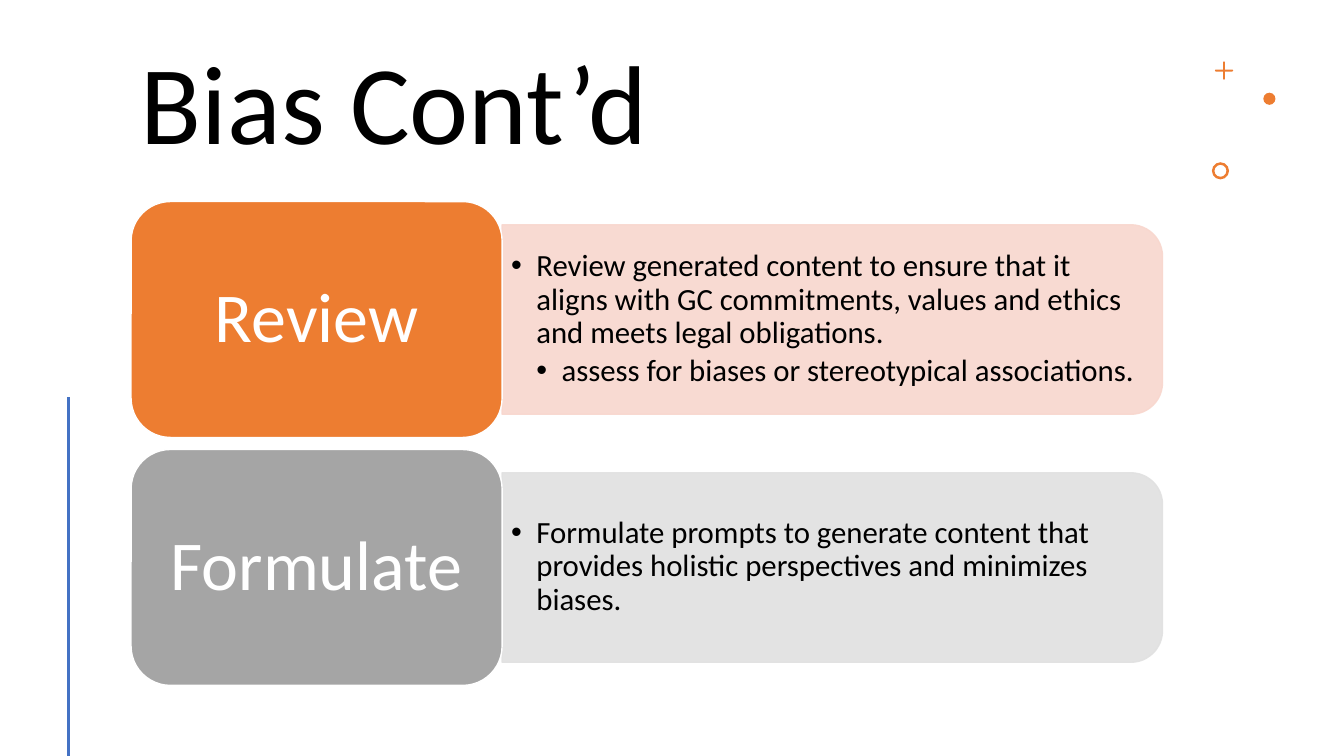
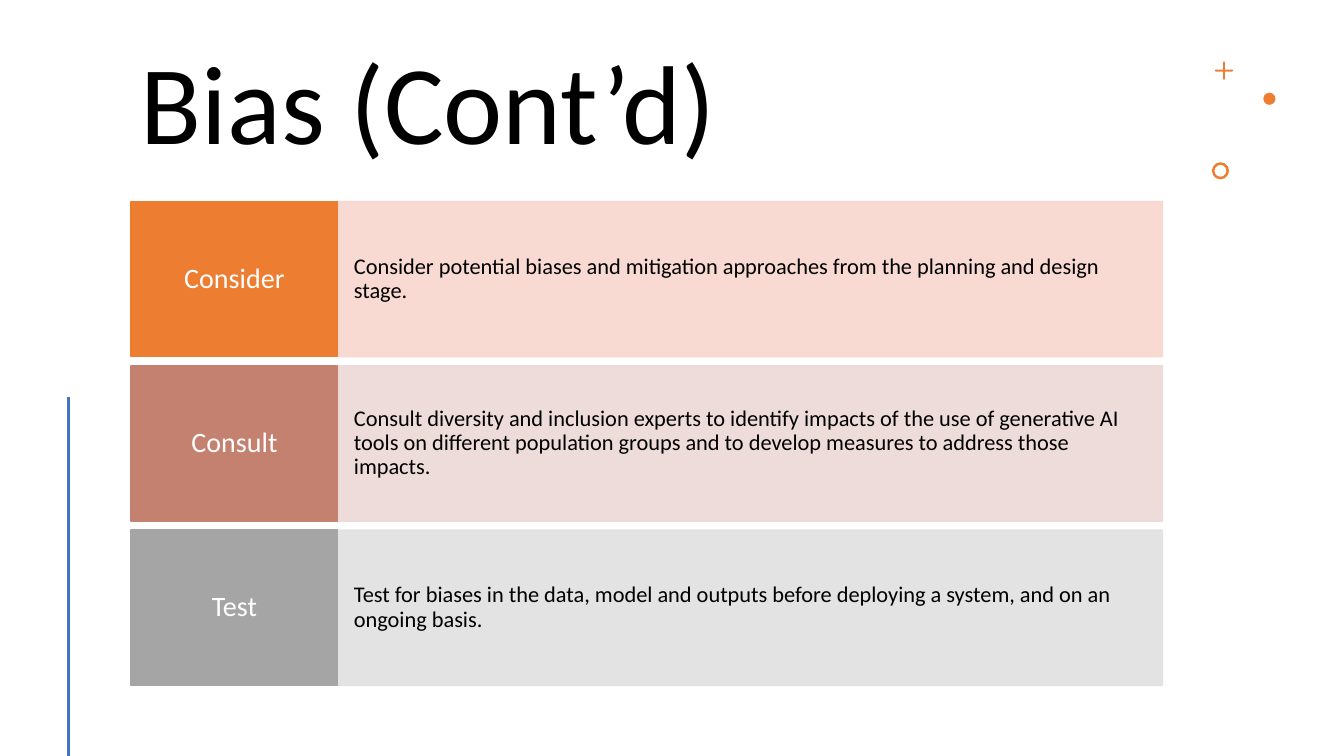
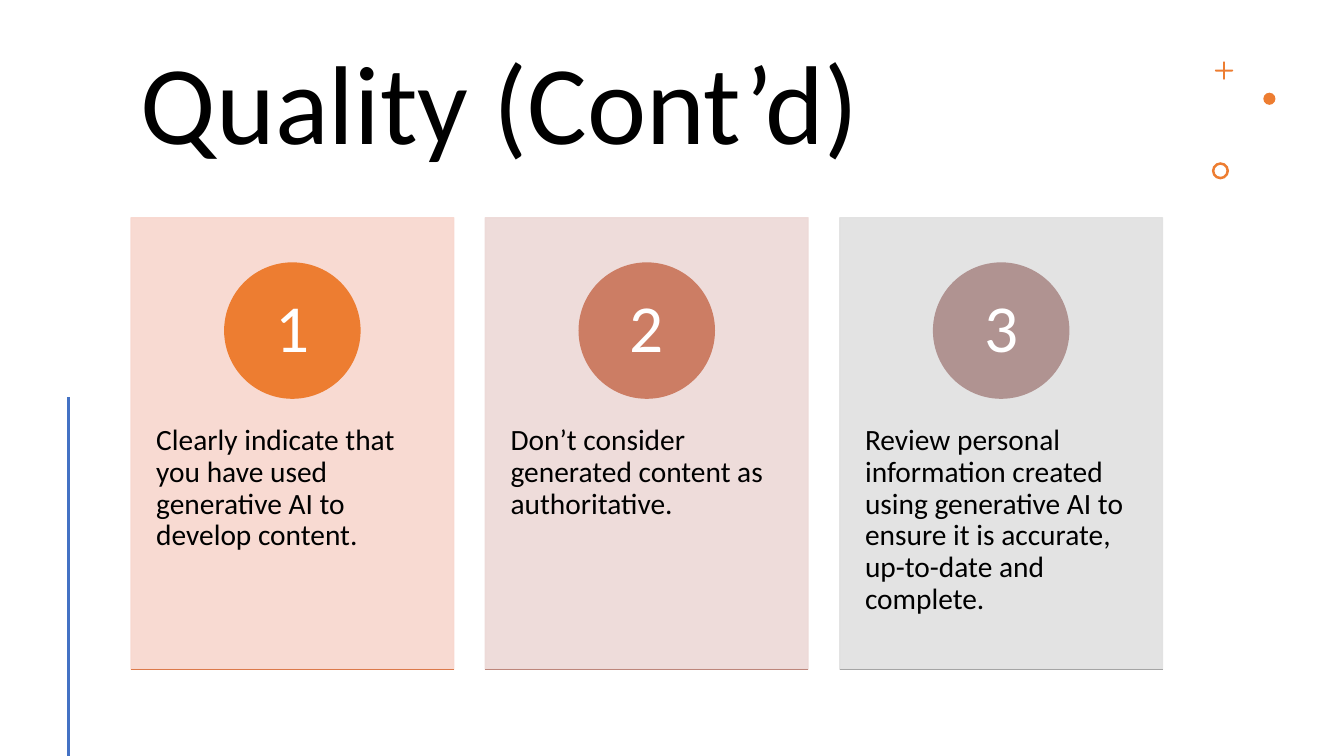
"""Build three slides on bias and quality when using generative AI."""
from math import cos, pi, radians, sin

from pptx import Presentation
from pptx.dml.color import RGBColor
from pptx.enum.shapes import MSO_CONNECTOR, MSO_SHAPE
from pptx.enum.text import MSO_ANCHOR, PP_ALIGN
from pptx.oxml.ns import qn
from pptx.util import Inches, Pt
from lxml.etree import SubElement

FONT = "Calibri"
BLACK = RGBColor(0x00, 0x00, 0x00)
WHITE = RGBColor(0xFF, 0xFF, 0xFF)
BLUE = RGBColor(0x44, 0x72, 0xC4)
ORANGE = RGBColor(0xED, 0x7D, 0x31)
ROSE = RGBColor(0xC4, 0x81, 0x70)
GRAY = RGBColor(0xA5, 0xA5, 0xA5)
TERRACOTTA = RGBColor(0xCC, 0x7D, 0x64)
MAUVE = RGBColor(0xB0, 0x93, 0x91)
RUST = RGBColor(0xDC, 0x7A, 0x4B)
DUSTY_ROSE = RGBColor(0xBD, 0x86, 0x7B)
PALE_ORANGE = RGBColor(0xF8, 0xD7, 0xCE)
PALE_ROSE = RGBColor(0xED, 0xD9, 0xD7)
PALE_GRAY = RGBColor(0xE1, 0xE1, 0xE1)

LEFT, TOP, WIDTH = 1.3, 2, 10.23

ACTIONS = [
    ("Review", ORANGE, PALE_ORANGE, [
        (1, "Review generated content to ensure that it aligns with GC commitments, "
            "values and ethics and meets legal obligations."),
        (2, "assess for biases or stereotypical associations."),
    ]),
    ("Formulate", GRAY, PALE_GRAY, [
        (1, "Formulate prompts to generate content that provides holistic "
            "perspectives and minimizes biases."),
    ]),
]
STEPS = [
    ("Consider", ORANGE, PALE_ORANGE,
     "Consider potential biases and mitigation approaches from the planning and design stage."),
    ("Consult", ROSE, PALE_ROSE,
     "Consult diversity and inclusion experts to identify impacts of the use of generative AI "
     "tools on different population groups and to develop measures to address those impacts."),
    ("Test", GRAY, PALE_GRAY,
     "Test for biases in the data, model and outputs before deploying a system, "
     "and on an ongoing basis."),
]
CARDS = [
    (ORANGE, PALE_ORANGE, RUST,
     "Clearly indicate that you have used generative AI to develop content."),
    (TERRACOTTA, PALE_ROSE, DUSTY_ROSE,
     "Don’t consider generated content as authoritative."),
    (MAUVE, PALE_GRAY, GRAY,
     "Review personal information created using generative AI to ensure it is accurate, "
     "up-to-date and complete."),
]


def style_shape(shape, fill, line=None, alpha=None):
    shape.shadow.inherit = False
    shape.fill.solid()
    shape.fill.fore_color.rgb = fill
    shape.line.color.rgb = line or fill
    shape.line.width = Pt(1)
    if alpha:
        for color in list(shape.element.spPr.iter(qn("a:srgbClr"))):
            SubElement(color, qn("a:alpha")).set("val", str(alpha * 1000))


def add_box(slide, kind, left, top, width, height, fill, line=None, alpha=None):
    shape = slide.shapes.add_shape(
        kind, Inches(left), Inches(top), Inches(width), Inches(height))
    style_shape(shape, fill, line, alpha)
    return shape


def write(shape, lines, size, color=BLACK, align=PP_ALIGN.LEFT,
          anchor=MSO_ANCHOR.MIDDLE, inset=(0.1, 0.05)):
    frame = shape.text_frame
    frame.word_wrap = True
    frame.vertical_anchor = anchor
    frame.margin_left = frame.margin_right = Inches(inset[0])
    frame.margin_top = frame.margin_bottom = Inches(inset[1])
    frame.text = "\n".join(lines)
    for paragraph in frame.paragraphs:
        paragraph.alignment = align
        paragraph.line_spacing = 0.9
        for run in paragraph.runs:
            run.font.name = FONT
            run.font.size = Pt(size)
            run.font.color.rgb = color
    return frame


def add_text_box(slide, left, top, width, height):
    return slide.shapes.add_textbox(
        Inches(left), Inches(top), Inches(width), Inches(height))


def add_bullet(paragraph, level):
    paragraph.space_after = Pt(3.3)
    properties = paragraph._p.get_or_add_pPr()
    properties.set("marL", str(Inches(0.25 * level)))
    properties.set("indent", str(Inches(-0.25)))
    SubElement(properties, qn("a:buFont")).set("typeface", "Arial")
    SubElement(properties, qn("a:buChar")).set("char", "•")


def add_line(slide, start, end, color, width):
    line = slide.shapes.add_connector(
        MSO_CONNECTOR.STRAIGHT, *[Inches(value) for value in start + end])
    line.line.color.rgb = color
    line.line.width = Pt(width)
    SubElement(line.element.spPr, qn("a:effectLst"))


def add_plus(slide, center_x, center_y, reach=0.09, half=0.01):
    points = []
    for turn in range(4):
        angle = turn * pi / 2
        tip = [(reach - half + half * cos(radians(step)), half * sin(radians(step)))
               for step in range(-90, 91, 30)]
        for along, across in [(half, -half)] + tip:
            points.append((
                Inches(center_x + along * cos(angle) - across * sin(angle)),
                Inches(center_y + along * sin(angle) + across * cos(angle))))
    builder = slide.shapes.build_freeform(*points[0], scale=1.0)
    builder.add_line_segments(points[1:], close=True)
    plus = builder.convert_to_shape()
    style_shape(plus, ORANGE)
    plus.line.fill.background()


def add_slide(presentation, title):
    slide = presentation.slides.add_slide(presentation.slide_layouts[6])
    write(add_text_box(slide, LEFT, 0.42, WIDTH, 1.31), [title], 80)
    add_plus(slide, 12.14, 0.7)
    dot = add_box(slide, MSO_SHAPE.OVAL, 12.53, 0.92, 0.12, 0.12, ORANGE)
    ring = add_box(slide, MSO_SHAPE.DONUT, 12.02, 1.61, 0.17, 0.17, ORANGE)
    ring.adjustments[0] = 0.15
    for mark in (dot, ring):
        mark.line.fill.background()
    add_line(slide, (0.68, 3.94), (0.68, 7.5), BLUE, 2)
    return slide


def add_actions(slide):
    label_width, label_height, pitch, panel_height = 3.68, 2.34, 2.46, 1.88
    panel_left, panel_width = LEFT + label_width, WIDTH - label_width
    for index, (label, color, pale, bullets) in enumerate(ACTIONS):
        top = TOP + index * pitch
        middle = top + label_height / 2
        panel = add_box(
            slide, MSO_SHAPE.ROUND_2_SAME_RECTANGLE,
            panel_left + (panel_width - panel_height) / 2, middle - panel_width / 2,
            panel_height, panel_width, pale, alpha=90)
        panel.rotation = 90
        box = add_text_box(slide, panel_left, middle - 0.85, 6.46, 1.69)
        frame = write(box, [text for _, text in bullets], 22, inset=(0.09, 0.05))
        for paragraph, (level, _) in zip(frame.paragraphs, bullets):
            add_bullet(paragraph, level)
        tile = add_box(slide, MSO_SHAPE.ROUNDED_RECTANGLE,
                       LEFT, top, label_width, label_height, color, WHITE)
        write(tile, [label], 50, WHITE, PP_ALIGN.CENTER, inset=(0.21, 0.1))


def add_steps(slide):
    label_width, height, pitch = 2.05, 1.54, 1.63
    for index, (label, color, pale, text) in enumerate(STEPS):
        top = TOP + index * pitch
        panel = add_box(slide, MSO_SHAPE.RECTANGLE, LEFT + label_width, top,
                        WIDTH - label_width, height, pale, alpha=90)
        write(panel, [text], 16, inset=(0.16, 0.39))
        tile = add_box(slide, MSO_SHAPE.RECTANGLE, LEFT, top, label_width, height, color)
        write(tile, [label], 20, WHITE, PP_ALIGN.CENTER, inset=(0.11, 0.15))


def add_cards(slide):
    top, width, height, circle = 2.16, 3.2, 4.48, 1.34
    pitch = (WIDTH - width) / (len(CARDS) - 1)
    for index, (color, pale, edge, text) in enumerate(CARDS):
        left = LEFT + index * pitch
        card = add_box(slide, MSO_SHAPE.RECTANGLE, left, top, width, height, pale, alpha=90)
        frame = write(card, [text], 21, anchor=MSO_ANCHOR.TOP, inset=(0.25, 0.36))
        frame.margin_top = Inches(2.06)
        badge = add_box(slide, MSO_SHAPE.OVAL, left + (width - circle) / 2, top + 0.45,
                        circle, circle, color)
        write(badge, [str(index + 1)], 48, WHITE, PP_ALIGN.CENTER, inset=(0.1, 0.01))
        bottom = top + height
        add_line(slide, (left, bottom), (left + width, bottom), edge, 1)


def main():
    presentation = Presentation()
    presentation.slide_width = Inches(13.33)
    presentation.slide_height = Inches(7.5)
    add_actions(add_slide(presentation, "Bias Cont’d"))
    add_steps(add_slide(presentation, "Bias (Cont’d)"))
    add_cards(add_slide(presentation, "Quality (Cont’d)"))
    presentation.save("out.pptx")


if __name__ == "__main__":
    main()
